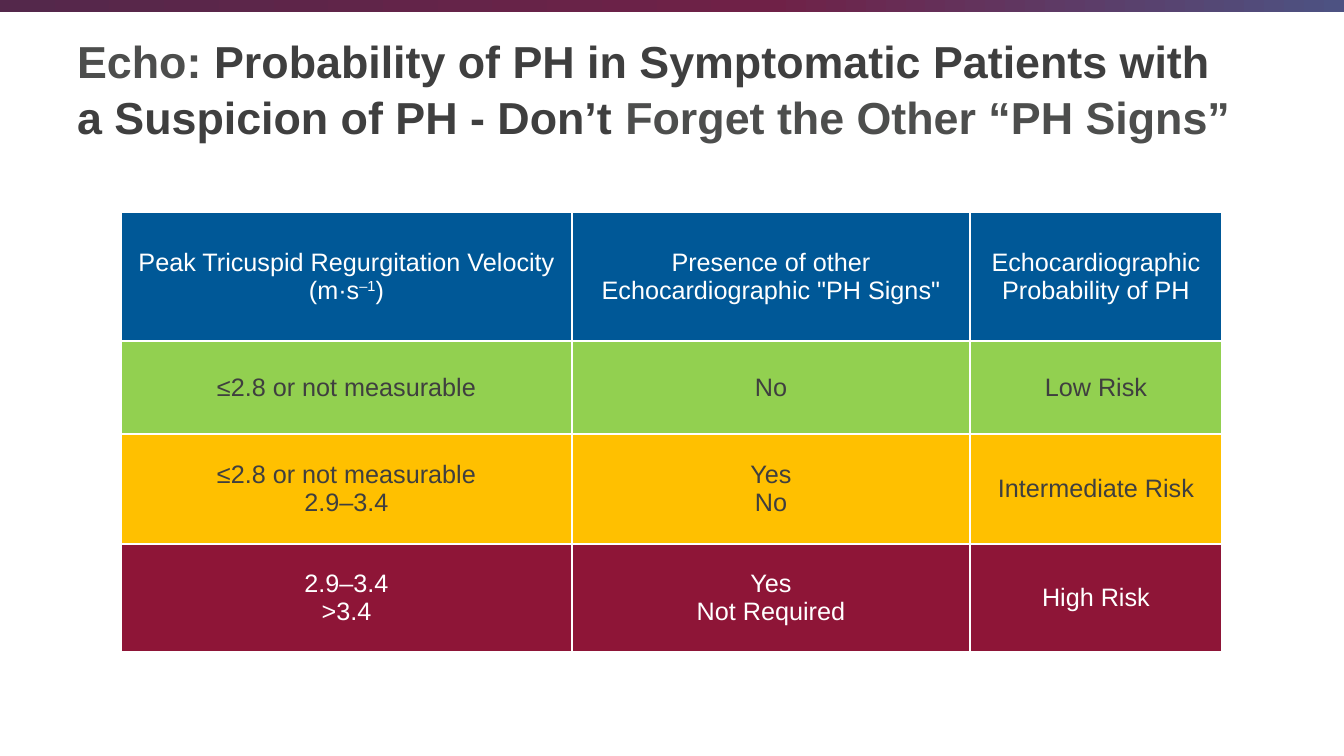
from copy import deepcopy
from dataclasses import dataclass

from pptx import Presentation
from pptx.dml.color import RGBColor as Rgb
from pptx.enum.shapes import MSO_SHAPE as Preset
from pptx.enum.text import MSO_ANCHOR as Anchor, MSO_AUTO_SIZE as AutoSize, PP_ALIGN as Align
from pptx.oxml import parse_xml
from pptx.oxml.ns import nsdecls, qn
from pptx.util import Pt

EMU_PER_PX = 914400 / 100.8


@dataclass(frozen=True)
class Theme:
    font: str = "Arial"
    title_size: int = 32
    cell_size: int = 18
    title_gray: str = "4D4E4D"
    dark: str = "3F3F3F"
    white: str = "FFFFFF"
    header: str = "005897"
    low: str = "92D050"
    intermediate: str = "FFC000"
    high: str = "8E1537"
    band: tuple = ((0, "54284B"), (0.57, "6F2147"), (1, "4D5282"))


THEME = Theme()

COLUMN_WIDTHS = (451, 398, 252)
RISK_ROWS = (
    (129, THEME.header, THEME.white, (
        (("Peak Tricuspid Regurgitation Velocity (m·s", "–1", ")"),),
        (("Presence of other",), ('Echocardiographic "PH Signs"',)),
        (("Echocardiographic",), ("Probability of PH",)),
    )),
    (93, THEME.low, THEME.dark, (
        (("≤2.8 or not measurable",),), (("No",),), (("Low Risk",),),
    )),
    (110, THEME.intermediate, THEME.dark, (
        (("≤2.8 or not measurable",), ("2.9–3.4",)),
        (("Yes",), ("No",)),
        (("Intermediate Risk",),),
    )),
    (108, THEME.high, THEME.white, (
        (("2.9–3.4",), (">3.4",)),
        (("Yes",), ("Not Required",)),
        (("High Risk",),),
    )),
)
TITLE_PARTS = (
    ("Echo: ", THEME.title_gray),
    ("Probability of PH in Symptomatic Patients with a Suspicion of PH - Don’t ", THEME.dark),
    ("Forget the Other “PH Signs”", THEME.title_gray),
)


def px(length):
    return round(length * EMU_PER_PX)


def apply(target, **values):
    for name, value in values.items():
        setattr(target, name, value)


def add_text(paragraph, text, size, color, bold=False):
    run = paragraph.add_run()
    run.text = text
    apply(run.font, name=THEME.font, size=Pt(size), bold=bold)
    run.font.color.rgb = Rgb.from_string(color)
    return run


def draw_band(slide, box):
    band = slide.shapes.add_shape(Preset.RECTANGLE, *map(px, box))
    band.shadow.inherit = False
    band.line.fill.background()
    band.fill.gradient()
    band.fill.gradient_angle = 0
    stop_list = band._element.spPr.find(".//" + qn("a:gsLst"))
    stop_list.append(deepcopy(stop_list[0]))
    for stop, (position, color) in zip(band.fill.gradient_stops, THEME.band):
        apply(stop, position=position)
        stop.color.rgb = Rgb.from_string(color)


def draw_title(slide, box):
    title = slide.shapes.title
    left, top, width, height = map(px, box)
    apply(title, left=left, top=top, width=width, height=height)
    apply(title.text_frame, word_wrap=True, auto_size=AutoSize.NONE,
          vertical_anchor=Anchor.MIDDLE)
    heading = title.text_frame.paragraphs[0]
    apply(heading, alignment=Align.LEFT, line_spacing=1.05)
    for text, color in TITLE_PARTS:
        add_text(heading, text, THEME.title_size, color, bold=True)


def add_borders(cell):
    properties = cell._tc.get_or_add_tcPr()
    for order, side in enumerate(("lnL", "lnR", "lnT", "lnB")):
        properties.insert(order, parse_xml(
            f'<a:{side} {nsdecls("a")} w="{Pt(1)}"><a:solidFill>'
            f'<a:srgbClr val="{THEME.white}"/></a:solidFill></a:{side}>'))


def fill_cell(cell, lines, fill, color):
    apply(cell, vertical_anchor=Anchor.MIDDLE, margin_left=px(11), margin_right=px(11),
          margin_top=px(5), margin_bottom=px(5))
    cell.fill.solid()
    cell.fill.fore_color.rgb = Rgb.from_string(fill)
    add_borders(cell)
    frame = cell.text_frame
    for index, parts in enumerate(lines):
        paragraph = frame.add_paragraph() if index else frame.paragraphs[0]
        paragraph.alignment = Align.CENTER
        for part in parts:
            run = add_text(paragraph, part, THEME.cell_size, color)
            if part == "–1":
                run._r.get_or_add_rPr().set("baseline", "30000")


def draw_risk_table(slide, box):
    risks = slide.shapes.add_table(len(RISK_ROWS), len(COLUMN_WIDTHS), *map(px, box)).table
    apply(risks, first_row=False, horz_banding=False)
    for column, width in zip(risks.columns, COLUMN_WIDTHS):
        column.width = px(width)
    for row, (height, fill, color, entries) in zip(risks.rows, RISK_ROWS):
        row.height = px(height)
        for cell, lines in zip(row.cells, entries):
            fill_cell(cell, lines, fill, color)


def main():
    deck = Presentation()
    apply(deck, slide_width=px(1344), slide_height=px(756))
    slide = deck.slides.add_slide(deck.slide_layouts.get_by_name("Title Only"))
    draw_band(slide, (0, 0, 1344, 12))
    draw_title(slide, (67, 22, 1185, 131))
    draw_risk_table(slide, (121, 212, sum(COLUMN_WIDTHS), sum(row[0] for row in RISK_ROWS)))
    deck.save("out.pptx")


if __name__ == "__main__":
    main()
